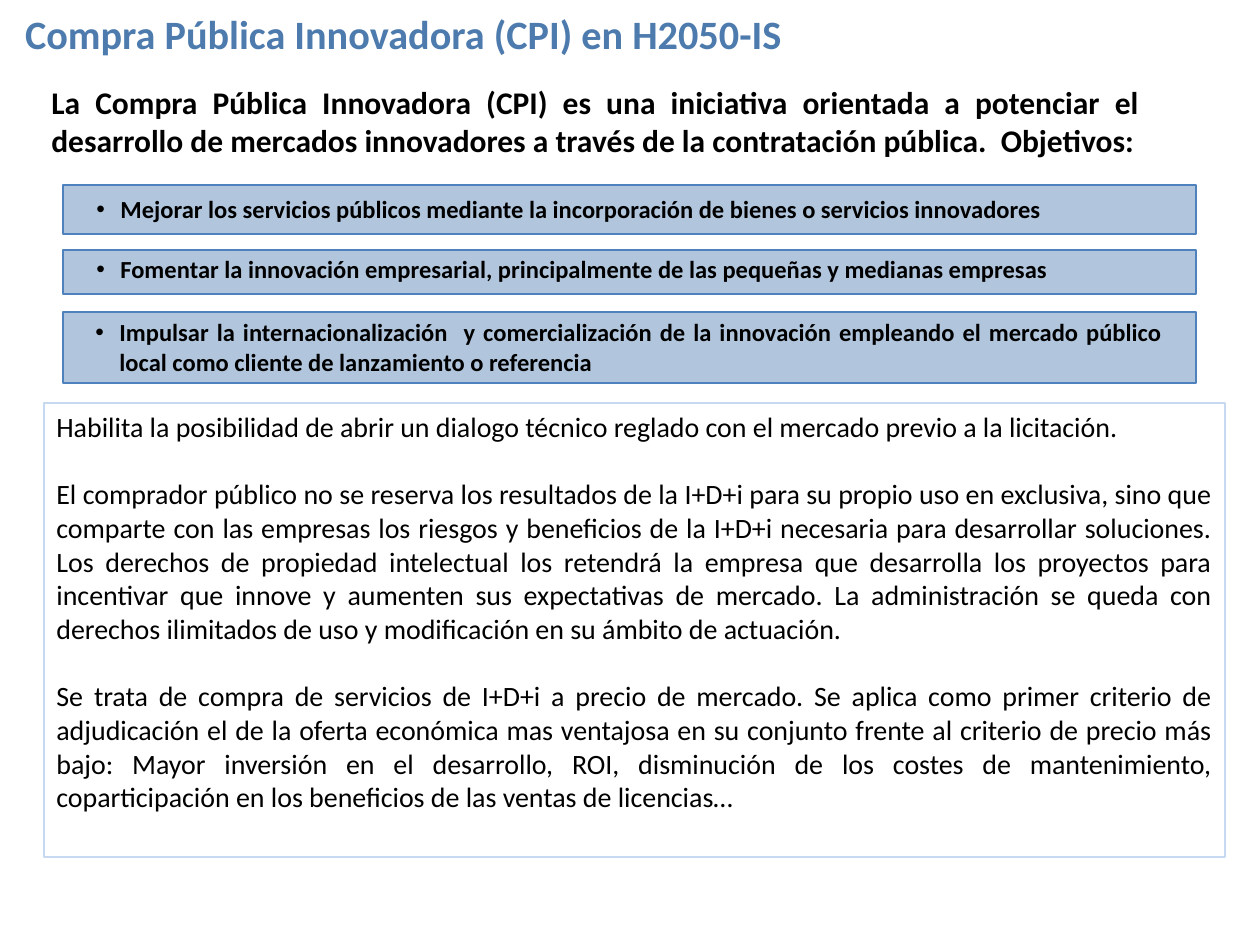
from dataclasses import dataclass

from lxml import etree
from pptx import Presentation, util as u
from pptx.dml.color import RGBColor
from pptx.enum import shapes, text
from pptx.oxml.ns import qn

PX = 914400 // 126  # one px in EMU


@dataclass(frozen=True)
class Theme:
    font: str = "Calibri"
    title: str = "4D7BAD"
    ink: str = "000000"
    bar: str = "B1C6DD"
    bar_line: str = "4F81BD"
    frame_line: str = "C6D9F1"
    title_size: int = 23
    intro_size: int = 18
    body_size: int = 16
    bullet_size: int = 14
    body_gap: float = 19.5  # one line of body text


T = Theme()

TITLE = "Compra Pública Innovadora (CPI) en H2050-IS"
INTRO = ("La Compra Pública Innovadora (CPI) es una iniciativa orientada a potenciar el "
         "desarrollo de mercados innovadores a través de la contratación pública.  Objetivos:")
# Bar top and height, text left, top, width and height relative to the bar, wording
GOALS = [
    (185, 49, (21, 3, 1074, 43),
     "Mejorar los servicios públicos mediante la incorporación de bienes o servicios innovadores"),
    (250, 44, (21, -2, 1074, 43),
     "Fomentar la innovación empresarial, principalmente de las pequeñas y medianas empresas"),
    (312, 71, (20, -1, 1092, 72),
     "Impulsar la internacionalización  y comercialización de la innovación empleando el "
     "mercado público local como cliente de lanzamiento o referencia"),
]
DETAILS = [
    "Habilita la posibilidad de abrir un dialogo técnico reglado con el mercado previo a la "
    "licitación.",
    "El comprador público no se reserva los resultados de la I+D+i para su propio uso en "
    "exclusiva, sino que comparte con las empresas los riesgos y beneficios de la I+D+i "
    "necesaria para desarrollar soluciones. Los derechos de propiedad intelectual los retendrá "
    "la empresa que desarrolla los proyectos para incentivar que innove y aumenten sus "
    "expectativas de mercado. La administración se queda con derechos ilimitados de uso y "
    "modificación en su ámbito de actuación.",
    "Se trata de compra de servicios de I+D+i a precio de mercado. Se aplica como primer "
    "criterio de adjudicación el de la oferta económica mas ventajosa en su conjunto frente al "
    "criterio de precio más bajo: Mayor inversión en el desarrollo, ROI, disminución de los "
    "costes de mantenimiento, coparticipación en los beneficios de las ventas de licencias…",
]


def set_all(obj, **values):
    for name, value in values.items():
        setattr(obj, name, value)


def emu(box):
    return [n * PX for n in box]


def write(p, wording, size, color=T.ink, bold=False, align=text.PP_ALIGN.JUSTIFY):
    p.alignment = align
    r = p.add_run()
    r.text = wording
    set_all(r.font, name=T.font, size=u.Pt(size), bold=bold)
    r.font.color.rgb = RGBColor.from_string(color)


def add_bullet(p):
    pPr = p._p.get_or_add_pPr()
    pPr.set("marL", str(24 * PX))
    pPr.set("indent", str(-24 * PX))
    etree.SubElement(pPr, qn("a:buFont")).set("typeface", "Arial")
    etree.SubElement(pPr, qn("a:buChar")).set("char", "•")


def add_rect(s, box, line, width, fill=None):
    sp = s.shapes.add_shape(shapes.MSO_SHAPE.RECTANGLE, *emu(box))
    sp.shadow.inherit = False
    if fill:
        sp.fill.solid()
        sp.fill.fore_color.rgb = RGBColor.from_string(fill)
    else:
        sp.fill.background()
    sp.line.color.rgb = RGBColor.from_string(line)
    sp.line.width = u.Pt(width)
    return sp


def add_text(s, box):
    tf = s.shapes.add_textbox(*emu(box)).text_frame
    tf.word_wrap = True
    return tf


def add_title(s, box):
    sp = s.shapes.title
    set_all(sp, **dict(zip(("left", "top", "width", "height"), emu(box))))
    tf = sp.text_frame
    set_all(tf, margin_left=0, margin_top=0, margin_right=0, margin_bottom=0,
            word_wrap=True, auto_size=text.MSO_AUTO_SIZE.NONE,
            vertical_anchor=text.MSO_ANCHOR.BOTTOM)
    write(tf.paragraphs[0], TITLE, T.title_size, T.title, True, text.PP_ALIGN.LEFT)


def add_intro(s, box):
    write(add_text(s, box).paragraphs[0], INTRO, T.intro_size, bold=True)


def add_goal(s, box, label, wording):
    """Draw a bar and its bullet; label is a box relative to the bar."""
    add_rect(s, box, T.bar_line, 1, T.bar)
    x, y, w, h = label
    p = add_text(s, (box[0] + x, box[1] + y, w, h)).paragraphs[0]
    add_bullet(p)
    write(p, wording, T.bullet_size, bold=True)


def add_details(s, box):
    tf = add_rect(s, box, T.frame_line, 1.5).text_frame
    set_all(tf, word_wrap=True, vertical_anchor=text.MSO_ANCHOR.TOP)
    for i, wording in enumerate(DETAILS):
        p = tf.add_paragraph() if i else tf.paragraphs[0]
        if i:
            p.space_before = u.Pt(T.body_gap)
        write(p, wording, T.body_size)


def main():
    prs = Presentation()
    set_all(prs, slide_width=u.Inches(10), slide_height=u.Inches(7.5))
    s = prs.slides.add_slide(prs.slide_layouts[5])
    add_title(s, (25, -24, 1251, 82))
    add_intro(s, (39, 77, 1113, 89))
    for top, height, label, wording in GOALS:
        add_goal(s, (63, top, 1133, height), label, wording)
    add_details(s, (44, 403, 1181, 454))
    prs.save("out.pptx")


if __name__ == "__main__":
    main()
